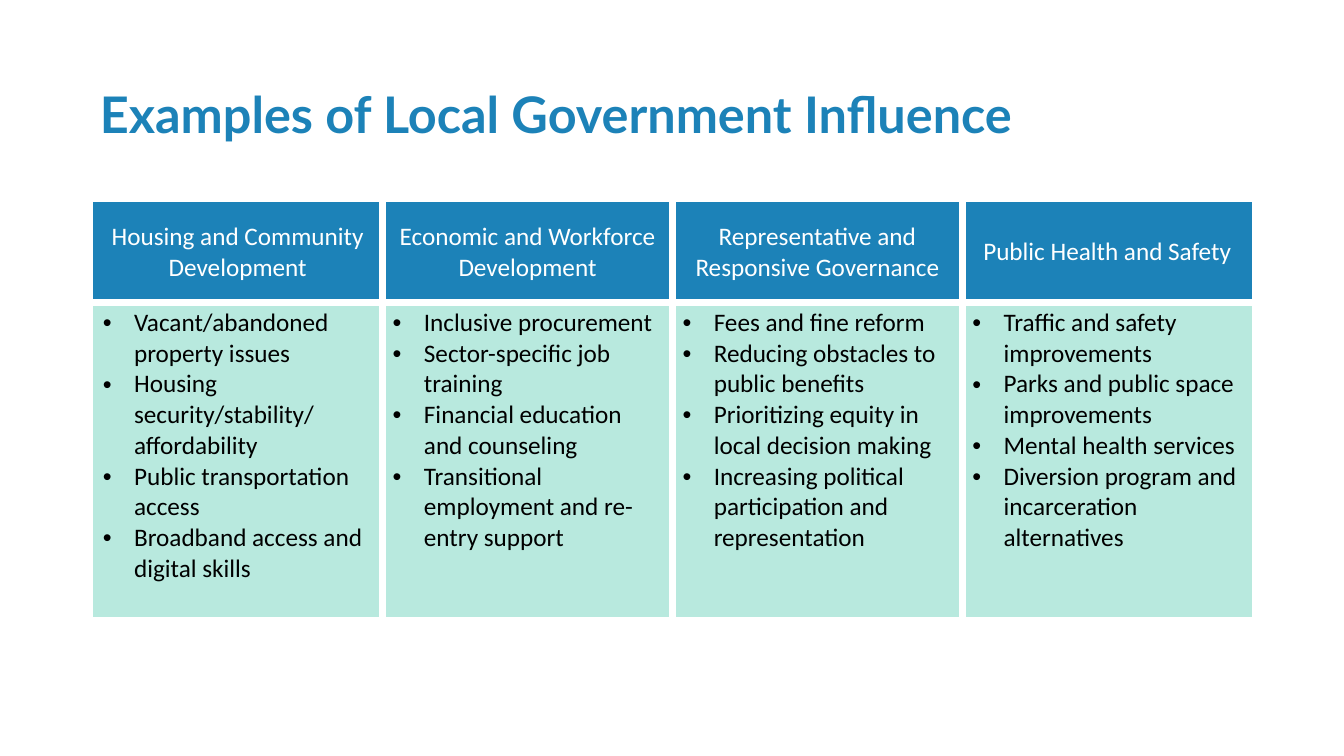
from lxml import etree
from pptx import Presentation
from pptx import util as u
from pptx.dml.color import RGBColor
from pptx.enum import text
from pptx.oxml.ns import qn

PX = 9144  # 100 px to the inch
BLUE, MINT, WHITE, BLACK = "1C82B8", "7CD8C3", "FFFFFF", "000000"
MINT_ALPHA = 54000
TOPICS = {
    "Housing and Community Development": [
        "Vacant/abandoned property issues",
        "Housing security/stability/ affordability",
        "Public transportation access",
        "Broadband access and digital skills",
    ],
    "Economic and Workforce Development": [
        "Inclusive procurement",
        "Sector-specific job training",
        "Financial education and counseling",
        "Transitional employment and re-entry support",
    ],
    "Representative and Responsive Governance": [
        "Fees and fine reform",
        "Reducing obstacles to public benefits",
        "Prioritizing equity in local decision making",
        "Increasing political participation and representation",
    ],
    "Public Health and Safety": [
        "Traffic and safety improvements",
        "Parks and public space improvements",
        "Mental health services",
        "Diversion program and incarceration alternatives",
    ],
}


def px(length):
    return u.Emu(int(length * PX))


def color(value):
    return RGBColor.from_string(value)


def style_font(font, name, size, value, bold=False):
    font.name, font.size, font.bold = name, u.Pt(size), bold
    font.color.rgb = color(value)


def add_bullet(para):
    props = para._p.get_or_add_pPr()
    props.set("marL", str(px(31)))
    props.set("indent", str(-px(31)))
    etree.SubElement(props, qn("a:buFont")).set("typeface", "Arial")
    etree.SubElement(props, qn("a:buChar")).set("char", "•")


def add_gaps(cell, sides):
    """Draw thick white borders on the given sides, in the order L, R, T, B."""
    props = cell._tc.get_or_add_tcPr()
    for index, side in enumerate(sides):
        line = etree.Element(qn(f"a:ln{side}"), w=str(u.Pt(6)))
        fill = etree.SubElement(line, qn("a:solidFill"))
        etree.SubElement(fill, qn("a:srgbClr")).set("val", WHITE)
        props.insert(index, line)


def fill_cell(cell, value, alpha=None):
    cell.fill.solid()
    cell.fill.fore_color.rgb = color(value)
    if alpha:
        tint = cell._tc.tcPr.find(f".//{qn('a:srgbClr')}")
        etree.SubElement(tint, qn("a:alpha")).set("val", str(alpha))


def write_header(cell, heading):
    fill_cell(cell, BLUE)
    cell.vertical_anchor = text.MSO_ANCHOR.MIDDLE
    para = cell.text_frame.paragraphs[0]
    para.text = heading
    para.alignment = text.PP_ALIGN.CENTER
    style_font(para.runs[0].font, "Calibri", 18, WHITE)


def write_examples(cell, examples):
    fill_cell(cell, MINT, MINT_ALPHA)
    cell.text_frame.text = "\n".join(examples)
    for para in cell.text_frame.paragraphs:
        add_bullet(para)
        style_font(para.runs[0].font, "Calibri", 18, BLACK)


def add_title(page, left, top, width, height):
    title = page.shapes.title
    title.left, title.top, title.width, title.height = map(px, (left, top, width, height))
    frame = title.text_frame
    frame.text = "Examples of Local Government Influence"
    frame.margin_left = frame.margin_right = frame.margin_top = frame.margin_bottom = 0
    frame.vertical_anchor = text.MSO_ANCHOR.BOTTOM
    frame.auto_size = text.MSO_AUTO_SIZE.NONE
    para = frame.paragraphs[0]
    para.alignment = text.PP_ALIGN.LEFT
    para.line_spacing = 1.1
    style_font(para.runs[0].font, "Lato", 36, BLUE, bold=True)


def add_topics(page, left, top, width, height, header_height):
    count = len(TOPICS)
    table = page.shapes.add_table(2, count, *map(px, (left, top, width, height))).table
    table.horz_banding = False
    table.rows[0].height = px(header_height)
    table.rows[1].height = px(height - header_height)
    for index, (heading, examples) in enumerate(TOPICS.items()):
        table.columns[index].width = px(width / count)
        header, body = table.cell(0, index), table.cell(1, index)
        write_header(header, heading)
        write_examples(body, examples)
        sides = ("L" if index else "") + ("R" if index < count - 1 else "")
        add_gaps(header, sides + "B")
        add_gaps(body, sides + "T")


def main():
    deck = Presentation()
    deck.slide_width, deck.slide_height = px(1333), px(750)
    page = deck.slides.add_slide(deck.slide_layouts[5])
    add_title(page, 99, 77, 1115, 65)
    add_topics(page, 92, 200, 1150, 413, header_height=100)
    deck.save("out.pptx")


if __name__ == "__main__":
    main()
